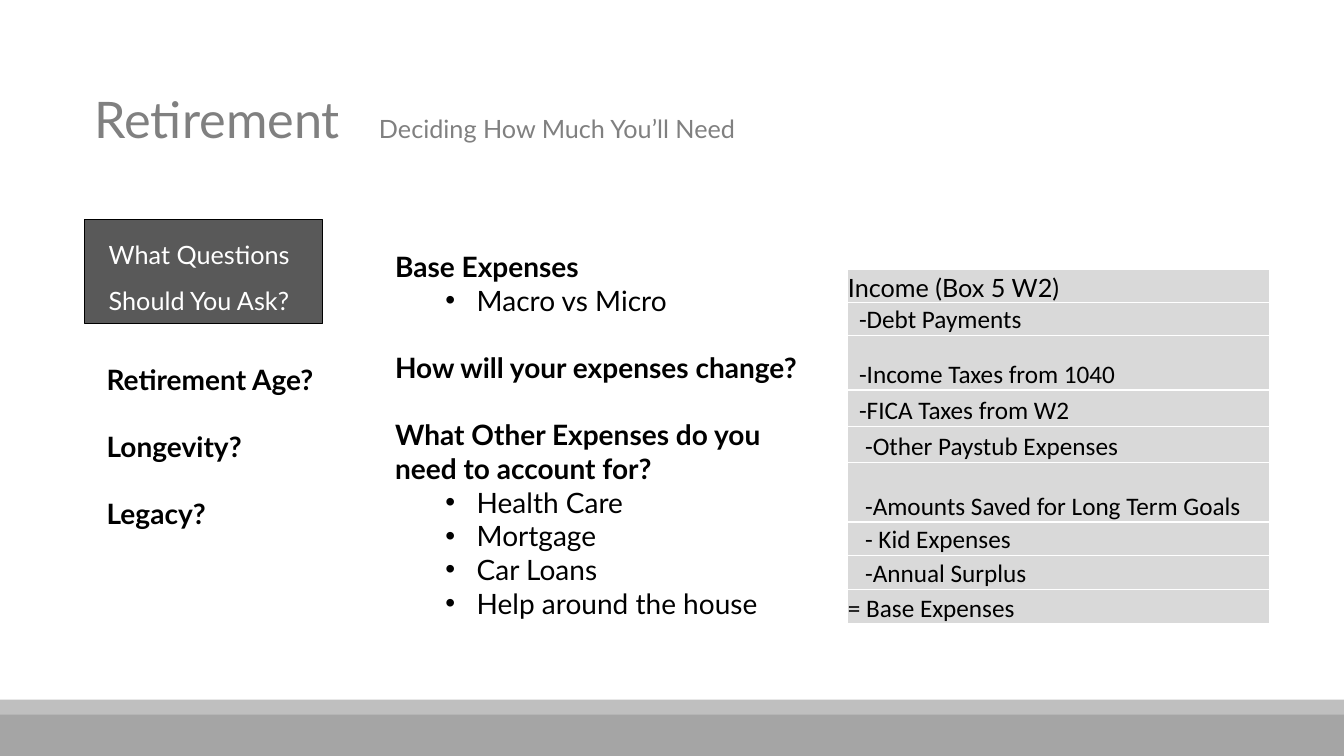
from dataclasses import dataclass

from lxml import etree
from pptx import Presentation
from pptx.dml.color import RGBColor
from pptx.enum import shapes, text
from pptx.oxml import ns
from pptx.util import Inches, Pt


@dataclass(frozen=True)
class Theme:
    """Colours, fonts and type sizes of the slide."""
    black: str = "000000"
    white: str = "FFFFFF"
    title: str = "808080"
    panel: str = "595959"
    cell: str = "D9D9D9"
    footer: str = "A5A5A5"
    footer_edge: str = "BFBFBF"
    font: str = "Lato"
    table_font: str = "Calibri"
    title_size: int = 36
    body_size: int = 20
    small_size: int = 18


@dataclass(frozen=True)
class Box:
    """Position and size in inches."""
    left: float
    top: float
    width: float
    height: float

    def emu(self) -> tuple:
        """Return the box as lengths."""
        return tuple(Inches(v) for v in (self.left, self.top, self.width, self.height))


@dataclass(frozen=True)
class Bar:
    """A filled rectangle."""
    box: Box
    fill: str
    line: str = ""


@dataclass(frozen=True)
class Item:
    """A paragraph of a text list."""
    words: str
    bullet: bool = False
    gap: int = 0


@dataclass(frozen=True)
class Row:
    """A table row with its height and text indent."""
    words: str
    height: float
    indent: float = 0
    font: str = "Calibri"


THEME = Theme()
BARS = [
    Bar(Box(0, 7, 13.33, 0.62), THEME.footer),
    Bar(Box(0, 6.94, 13.33, 0.15), THEME.footer_edge),
    Bar(Box(0.84, 2.18, 2.36, 1.03), THEME.panel, THEME.black),
]
TOPICS = [Item("Retirement Age?"), Item("Longevity?"), Item("Legacy?")]
EXPENSES = [
    Item("Base Expenses"),
    Item("Macro vs Micro", bullet=True),
    Item("How will your expenses change?", gap=24),
    Item("What Other Expenses do you \vneed to account for?", gap=24),
    Item("Health Care", bullet=True),
    Item("Mortgage", bullet=True),
    Item("Car Loans", bullet=True),
    Item("Help around the house", bullet=True),
]
ROWS = [
    Row("Income (Box 5 W2)", 0.33, font=THEME.font),
    Row("-Debt Payments", 0.33, 0.11),
    Row("-Income Taxes from 1040", 0.54, 0.11),
    Row("-FICA Taxes from W2", 0.36, 0.11),
    Row("-Other Paystub Expenses", 0.36, 0.17),
    Row("-Amounts Saved for Long Term Goals", 0.59, 0.17),
    Row("- Kid Expenses", 0.33, 0.17),
    Row("-Annual Surplus", 0.34, 0.17),
    Row("= Base Expenses", 0.34),
]


def add_element(parent, tag: str, **attributes: str):
    """Append a drawing element and return it."""
    return etree.SubElement(parent, ns.qn(tag), attributes)


def style_run(run, size: int, color: str, bold: bool = False, font: str = THEME.font) -> None:
    """Format one run."""
    run.font.name = font
    run.font.size = Pt(size)
    run.font.bold = bold
    run.font.color.rgb = RGBColor.from_string(color)


def add_bar(slide, bar: Bar) -> None:
    """Draw a filled rectangle."""
    shape = slide.shapes.add_shape(shapes.MSO_SHAPE.RECTANGLE, *bar.box.emu())
    shape.shadow.inherit = False
    shape.fill.solid()
    shape.fill.fore_color.rgb = RGBColor.from_string(bar.fill)
    if bar.line:
        shape.line.color.rgb = RGBColor.from_string(bar.line)
        shape.line.width = Pt(1)
    else:
        shape.line.fill.background()


def add_text_frame(slide, box: Box, wrap: bool = True):
    """Add a text box that grows with its text."""
    frame = slide.shapes.add_textbox(*box.emu()).text_frame
    frame.word_wrap = wrap
    frame.auto_size = text.MSO_AUTO_SIZE.SHAPE_TO_FIT_TEXT
    return frame


def add_list(slide, box: Box, items: list[Item], spacing: float = 1, wrap: bool = True) -> None:
    """Write bold headings and bulleted entries."""
    frame = add_text_frame(slide, box, wrap)
    frame.text = "\n".join(item.words for item in items)
    for paragraph, item in zip(frame.paragraphs, items):
        properties = paragraph._p.get_or_add_pPr()
        properties.set("marL", str(Inches(1.31 if item.bullet else 0.5)))
        properties.set("indent", str(Inches(-0.31 if item.bullet else 0)))
        if item.bullet:
            add_element(properties, "a:buFont", typeface="Arial")
            add_element(properties, "a:buChar", char="•")
        paragraph.line_spacing = float(spacing)
        if item.gap:
            paragraph.space_before = Pt(item.gap)
        for run in paragraph.runs:
            style_run(run, THEME.body_size, THEME.black, not item.bullet)


def add_title(slide) -> None:
    """Write the title and its subtitle at a tab stop."""
    paragraph = add_text_frame(slide, Box(0.84, 0.82, 6.89, 0.71)).paragraphs[0]
    tabs = add_element(paragraph._p.get_or_add_pPr(), "a:tabLst")
    add_element(tabs, "a:tab", pos=str(Inches(2.82)), algn="l")
    for words, size in (("Retirement\t", THEME.title_size),
                        ("Deciding How Much You’ll Need", THEME.small_size)):
        run = paragraph.add_run()
        run.text = words
        style_run(run, size, THEME.title)


def add_question(slide) -> None:
    """Write the question on the dark panel."""
    frame = add_text_frame(slide, Box(0.98, 2.18, 2.29, 0.97))
    frame.text = "What Questions Should You Ask?"
    frame.paragraphs[0].line_spacing = 1.5
    style_run(frame.paragraphs[0].runs[0], THEME.small_size, THEME.white)


def add_income_table(slide, left: float, top: float, width: float, rows: list[Row]) -> None:
    """Draw the income table."""
    box = Box(left, top, width, sum(row.height for row in rows))
    table = slide.shapes.add_table(len(rows), 1, *box.emu()).table
    for index, row in enumerate(rows):
        table.rows[index].height = Inches(row.height)
        cell = table.cell(index, 0)
        cell.text = row.words
        cell.vertical_anchor = text.MSO_ANCHOR.BOTTOM
        cell.margin_left = Inches(0.01 + row.indent)
        cell.margin_right = cell.margin_top = Inches(0.01)
        cell.margin_bottom = 0
        for side in ("a:lnL", "a:lnR", "a:lnT", "a:lnB"):
            border = add_element(cell._tc.get_or_add_tcPr(), side, w=str(Pt(1)))
            add_element(add_element(border, "a:solidFill"), "a:srgbClr", val=THEME.white)
        cell.fill.solid()
        cell.fill.fore_color.rgb = RGBColor.from_string(THEME.cell)
        run = cell.text_frame.paragraphs[0].runs[0]
        style_run(run, THEME.small_size, THEME.black, font=row.font)


def main() -> None:
    """Build and save the slide."""
    presentation = Presentation()
    presentation.slide_width = Inches(13.33)
    presentation.slide_height = Inches(7.5)
    slide = presentation.slides.add_slide(presentation.slide_layouts[6])
    for bar in BARS:
        add_bar(slide, bar)
    add_list(slide, Box(0.46, 3.21, 2.86, 2.12), TOPICS, spacing=2)
    add_income_table(slide, 8.4, 2.67, 4.19, ROWS)
    add_title(slide)
    add_question(slide)
    add_list(slide, Box(3.32, 2.43, 4.73, 4.11), EXPENSES, wrap=False)
    presentation.save("out.pptx")


if __name__ == "__main__":
    main()
